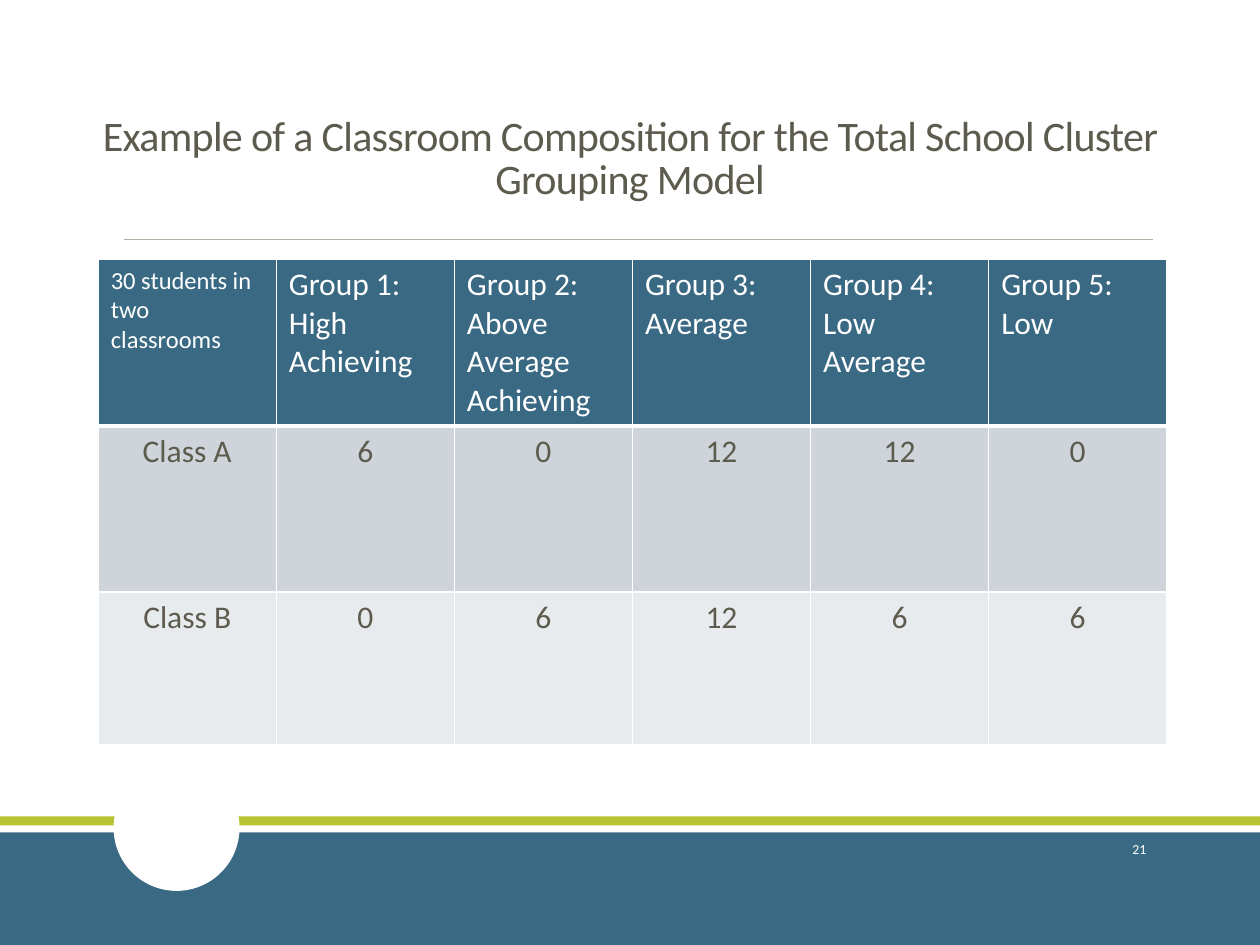
from pptx import Presentation
from pptx.dml.color import RGBColor
from pptx.enum.shapes import MSO_CONNECTOR as Link, MSO_SHAPE as Shape
from pptx.enum.text import MSO_ANCHOR as Anchor, MSO_AUTO_SIZE as Fit, PP_ALIGN as Align
from pptx.oxml.ns import qn
from pptx.util import Cm, Pt
from lxml.etree import SubElement as Sub

BLUE = RGBColor(0x3A, 0x69, 0x83)
LIME = RGBColor(0xB7, 0xC3, 0x33)
WHITE = RGBColor(0xFF, 0xFF, 0xFF)
INK = RGBColor(0x5D, 0x5B, 0x4E)
RULE = RGBColor(0xB2, 0xB0, 0xA3)
BANDS = [BLUE, RGBColor(0xCE, 0xD4, 0xD9), RGBColor(0xE8, 0xEB, 0xED)]

TITLE = "Example of a Classroom Composition for the Total School Cluster Grouping Model"
ROWS = [
    ["30 students in two classrooms", "Group 1: High Achieving",
     "Group 2: Above Average Achieving", "Group 3: Average",
     "Group 4: Low Average", "Group 5: Low"],
    ["Class A", "6", "0", "12", "12", "0"],
    ["Class B", "0", "6", "12", "6", "6"],
]
HEIGHTS = [3.35, 3.35, 3.07]
COL = 3.59


def box(*sides):
    return [Cm(side) for side in sides]


def put_text(frame, text, size, color, align):
    frame.text = text
    para = frame.paragraphs[0]
    para.alignment = align
    run = para.runs[0]
    look = {"name": "Calibri", "size": Pt(size), "bold": False}
    for key, value in look.items():
        setattr(run.font, key, value)
    run.font.color.rgb = color
    return para


def add_block(slide, kind, color, *sides):
    block = slide.shapes.add_shape(kind, *box(*sides))
    block.shadow.inherit = False
    block.fill.solid()
    block.fill.fore_color.rgb = color
    block.line.fill.background()


def add_rule(slide, *ends):
    rule = slide.shapes.add_connector(Link.STRAIGHT, *box(*ends))
    rule.line.color.rgb = RULE
    rule.line.width = Pt(0.5)
    Sub(rule.element.spPr, qn("a:effectLst"))


def set_title(slide):
    title = slide.shapes.title
    title.left, title.top, title.width, title.height = box(1.27, 0.84, 22.86, 3.38)
    frame = title.text_frame
    look = {"word_wrap": True, "auto_size": Fit.NONE, "vertical_anchor": Anchor.BOTTOM}
    for key, value in look.items():
        setattr(frame, key, value)
    para = put_text(frame, TITLE, 24, INK, Align.CENTER)
    para.line_spacing = 0.85
    para.runs[0].font._element.set("spc", "-40")


def set_edges(cell, base):
    """Draw white cell borders; base is the width of the bottom one in points."""
    props = cell._tc.get_or_add_tcPr()
    widths = {"lnL": 1, "lnR": 1, "lnT": 1, "lnB": base}
    for spot, (tag, width) in enumerate(widths.items()):
        edge = Sub(props, qn(f"a:{tag}"), w=str(Pt(width)))
        fill = Sub(edge, qn("a:solidFill"))
        Sub(fill, qn("a:srgbClr"), val=str(WHITE))
        props.insert(spot, edge)


def add_grid(slide):
    count = len(ROWS[0])
    sides = box(1.98, 5.23, COL * count, sum(HEIGHTS))
    grid = slide.shapes.add_table(len(ROWS), count, *sides).table
    for col in grid.columns:
        col.width = Cm(COL)
    for i, (texts, tall, band) in enumerate(zip(ROWS, HEIGHTS, BANDS)):
        grid.rows[i].height = Cm(tall)
        head = i == 0
        for j, text in enumerate(texts):
            cell = grid.cell(i, j)
            cell.fill.solid()
            cell.fill.fore_color.rgb = band
            set_edges(cell, 3 if head else 1)
            put_text(cell.text_frame, text, 14 if head and j == 0 else 18,
                     WHITE if head else INK, Align.LEFT if head else Align.CENTER)


def add_number(slide, text):
    frame = slide.shapes.add_textbox(*box(20.62, 16.61, 2.74, 1.02)).text_frame
    frame.word_wrap = True
    frame.vertical_anchor = Anchor.MIDDLE
    put_text(frame, text, 7.9, WHITE, Align.RIGHT)


def main():
    deck = Presentation()
    deck.slide_width, deck.slide_height = box(25.4, 19.05)
    slide = deck.slides.add_slide(deck.slide_layouts[5])
    add_block(slide, Shape.RECTANGLE, LIME, 0, 16.46, 25.4, 0.18)
    add_block(slide, Shape.RECTANGLE, BLUE, 0, 16.78, 25.4, 2.27)
    add_block(slide, Shape.OVAL, WHITE, 2.29, 15.42, 2.54, 2.54)
    add_rule(slide, 2.49, 4.83, 23.24, 4.83)
    set_title(slide)
    add_grid(slide)
    add_number(slide, "21")
    deck.save("out.pptx")


if __name__ == "__main__":
    main()
